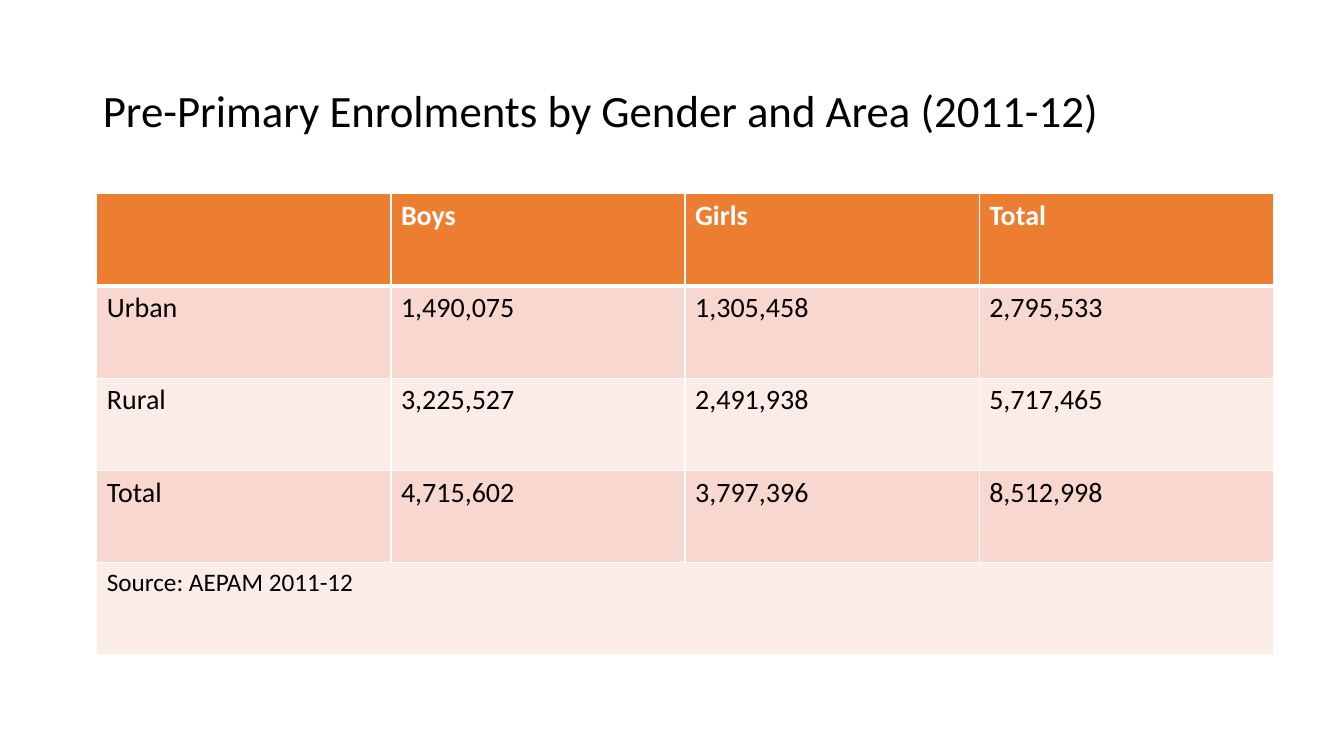
from lxml.etree import SubElement as Sub
from pptx import Presentation as Deck
from pptx.dml.color import RGBColor as RGB
from pptx.enum.text import MSO_ANCHOR as Anchor, PP_ALIGN as Align
from pptx.oxml.ns import qn
from pptx.util import Inches, Pt

BLACK = RGB(0x00, 0x00, 0x00)
WHITE = RGB(0xFF, 0xFF, 0xFF)
ORANGE = RGB(0xED, 0x7D, 0x31)
PEACH = RGB(0xF8, 0xD7, 0xCE)
BLUSH = RGB(0xFC, 0xEC, 0xE8)

ROWS = [
    ["", "Boys", "Girls", "Total"],
    ["Urban", "1,490,075", "1,305,458", "2,795,533"],
    ["Rural", "3,225,527", "2,491,938", "5,717,465"],
    ["Total", "4,715,602", "3,797,396", "8,512,998"],
    ["Source: AEPAM 2011-12", "", "", ""],
]


class Page:
    """Holds the text style and the current slide."""

    def __init__(self, deck, face="Calibri"):
        self.slide = deck.slides.add_slide(deck.slide_layouts[5])
        self.face = face

    def style(self, para, size, color=BLACK, bold=False):
        form = {"name": self.face, "size": Pt(size), "bold": bold}
        for run in para.runs:
            for key, value in form.items():
                setattr(run.font, key, value)
            run.font.color.rgb = color

    def title(self, text, box, size):
        shape = self.slide.shapes.title
        sides = ("left", "top", "width", "height")
        for side, value in zip(sides, box):
            setattr(shape, side, Inches(value))
        frame = shape.text_frame
        frame.text = text
        frame.vertical_anchor = Anchor.MIDDLE
        para = frame.paragraphs[0]
        para.alignment = Align.LEFT
        para.line_spacing = 0.9
        self.style(para, size)

    def border(self, cell, widths):
        props = cell._tc.get_or_add_tcPr()
        for side, width in widths.items():
            line = Sub(props, qn(f"a:ln{side}"), w=str(Pt(width)))
            fill = Sub(line, qn("a:solidFill"))
            Sub(fill, qn("a:srgbClr"), val=str(WHITE))

    def table(self, rows, box):
        area = [Inches(value) for value in box]
        grid = self.slide.shapes.add_table(len(rows), len(rows[0]), *area).table
        last = len(rows) - 1
        grid.cell(last, 0).merge(grid.cell(last, len(rows[0]) - 1))
        for r, row in enumerate(rows):
            head = r == 0
            tint = ORANGE if head else PEACH if r % 2 else BLUSH
            edges = {"L": 1, "R": 1, "T": 3 if r == 1 else 1, "B": 3 if head else 1}
            for c, text in enumerate(row):
                cell = grid.cell(r, c)
                self.border(cell, edges)
                cell.fill.solid()
                cell.fill.fore_color.rgb = tint
                if text:
                    cell.text = text
                    para = cell.text_frame.paragraphs[0]
                    size = 18 if r == last else 20
                    self.style(para, size, WHITE if head else BLACK, head)


def main():
    deck = Deck()
    deck.slide_width, deck.slide_height = Inches(13.33), Inches(7.5)
    page = Page(deck)
    title = "Pre-Primary Enrolments by Gender and Area (2011-12)"
    page.title(title, (0.92, 0.4, 11.5, 1.45), 32)
    page.table(ROWS, (0.96, 1.92, 11.67, 4.58))
    deck.save("out.pptx")


if __name__ == "__main__":
    main()
